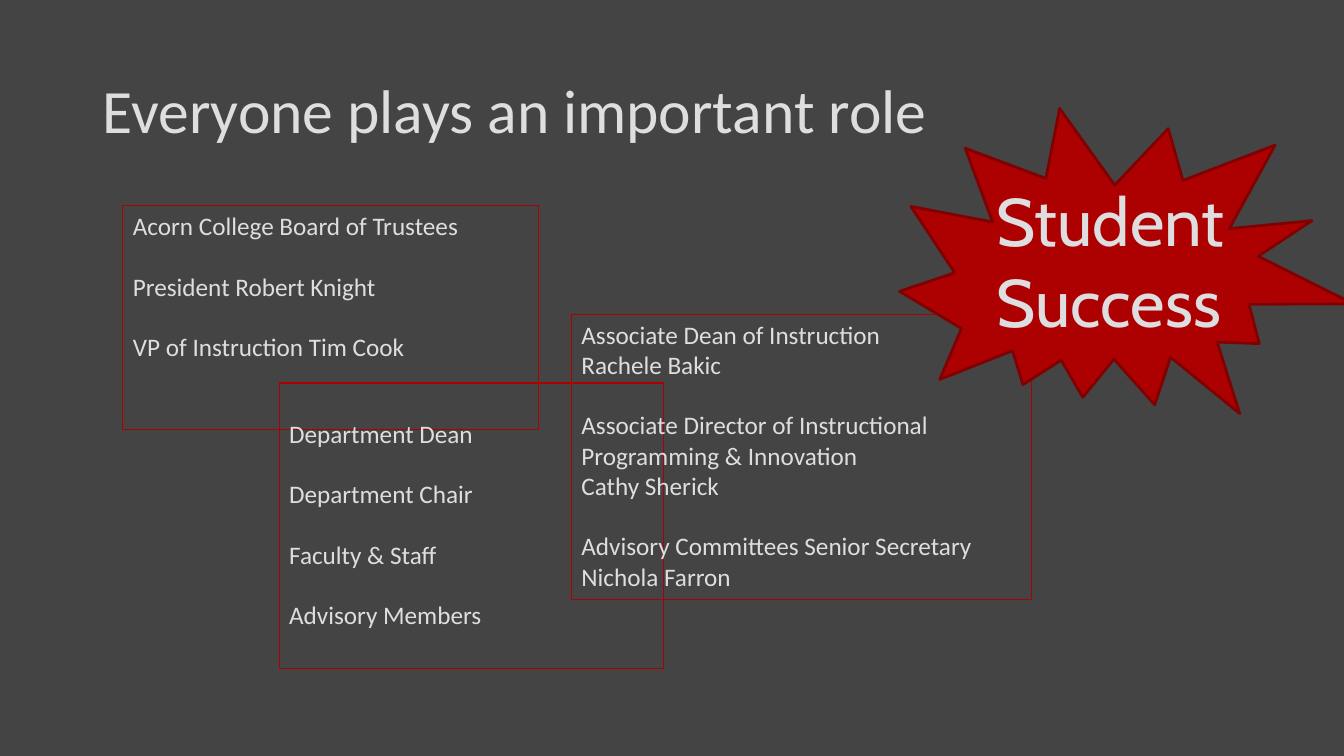
"""Build the slide on who plays a role in student success."""
from dataclasses import dataclass

from pptx import Presentation
from pptx.dml.color import RGBColor
from pptx.enum.shapes import MSO_SHAPE
from pptx.enum.text import MSO_ANCHOR
from pptx.util import Pt

BURST = MSO_SHAPE.EXPLOSION2
MIDDLE, TOP = MSO_ANCHOR.MIDDLE, MSO_ANCHOR.TOP
COLORS = {"back": "444444", "text": "DEDEE0", "red": "AD0101", "edge": "800101"}
GAP = 21.6
INSET = 3.6


@dataclass
class TextBox:
    x: float
    y: float
    w: float
    h: float
    groups: list[list[str]]
    size: float = 18
    font: str = "Calibri"
    framed: bool = False
    top: float = INSET
    anchor: MSO_ANCHOR = TOP
    spacing: float = 1.0


BOXES = [
    TextBox(66.24, 28.8, 828, 104.4, [["Everyone plays an important role"]],
            size=44, anchor=MIDDLE, spacing=0.9),
    TextBox(87.84, 146.9, 296.64, 159.84,
            [["Acorn College Board of Trustees"], ["President Robert Knight"],
             ["VP of Instruction Tim Cook"]], framed=True),
    TextBox(199.44, 273.6, 274.32, 203.76,
            [["Department Dean"], ["Department Chair"], ["Faculty & Staff"],
             ["Advisory Members"]], framed=True, top=INSET + GAP),
    TextBox(408.24, 224.4, 328.32, 203.76,
            [["Associate Dean of Instruction", "Rachele Bakic"],
             ["Associate Director of Instructional Programming & Innovation",
              "Cathy Sherick"],
             ["Advisory Committees Senior Secretary", "Nichola Farron"]],
            framed=True),
]
SUCCESS = TextBox(704.88, 124.56, 245.52, 123.84, [["Student Success"]],
                  size=48, font="Cabin")


def color(name: str) -> RGBColor:
    """Return a named colour."""
    return RGBColor.from_string(COLORS[name])


def add_text(s, box: TextBox) -> None:
    """Draw a text box whose groups are set apart by a line's height."""
    sp = s.shapes.add_textbox(Pt(box.x), Pt(box.y), Pt(box.w), Pt(box.h))
    if box.framed:
        sp.line.color.rgb = color("red")
        sp.line.width = Pt(0.75)
    tf = sp.text_frame
    tf.word_wrap = True
    tf.vertical_anchor = box.anchor
    tf.margin_top = Pt(box.top)
    p = tf.paragraphs[0]
    for i, group in enumerate(box.groups):
        for j, line in enumerate(group):
            if i or j:
                p = tf.add_paragraph()
            p.line_spacing = box.spacing
            if i and not j:
                p.space_before = Pt(GAP)
            r = p.add_run()
            r.text = line
            r.font.size = Pt(box.size)
            r.font.name = box.font
            r.font.color.rgb = color("text")


def add_burst(s) -> None:
    """Draw the red burst behind the goal."""
    sp = s.shapes.add_shape(BURST, Pt(645.84), Pt(66.24), Pt(315.36), Pt(254.16))
    sp.rotation = 25.5
    sp.shadow.inherit = False
    sp.fill.solid()
    sp.fill.fore_color.rgb = color("red")
    sp.line.color.rgb = color("edge")
    sp.line.width = Pt(2)


def main() -> None:
    """Build and save the slide."""
    prs = Presentation()
    prs.slide_width, prs.slide_height = Pt(960), Pt(540)
    s = prs.slides.add_slide(prs.slide_layouts[6])
    s.background.fill.solid()
    s.background.fill.fore_color.rgb = color("back")
    for box in BOXES:
        add_text(s, box)
    add_burst(s)
    add_text(s, SUCCESS)
    prs.save("out.pptx")


if __name__ == "__main__":
    main()
